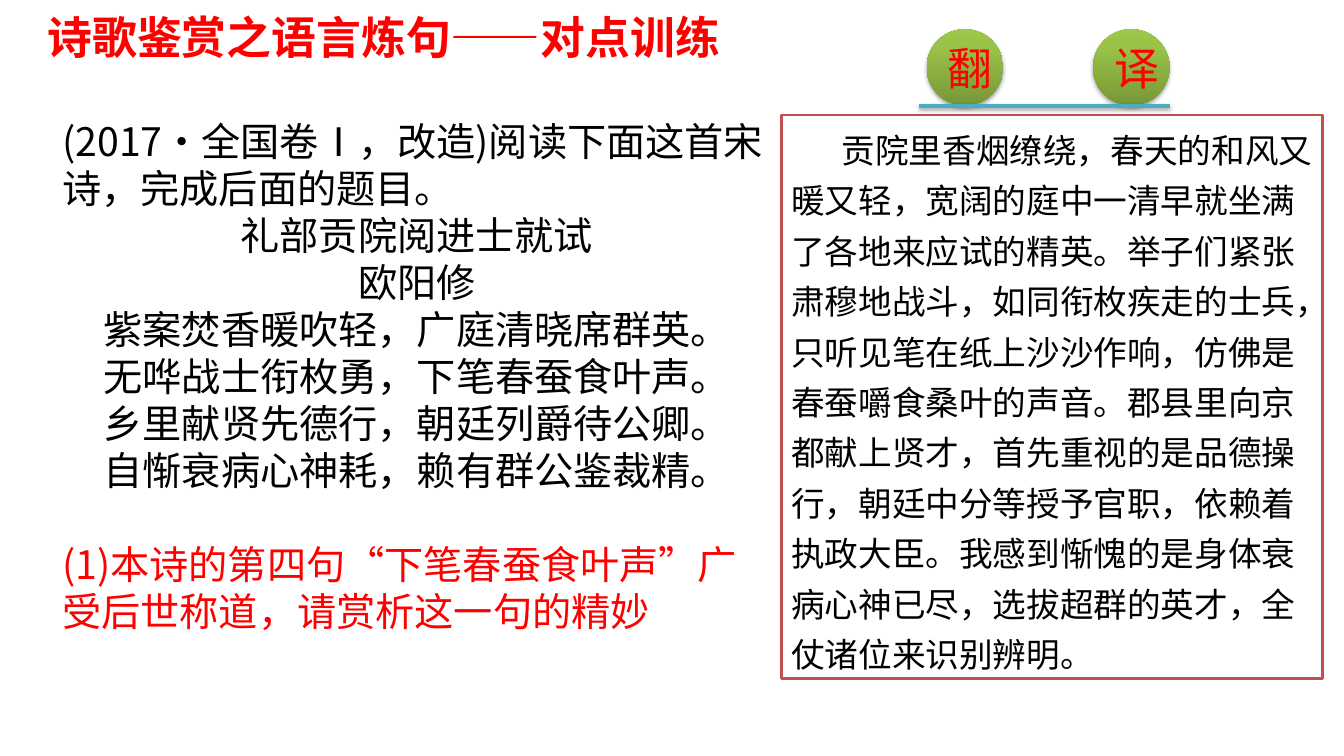
"""Builds a poetry appreciation slide with a poem, a question and its translation."""
from pptx import Presentation
from pptx import util as u
from pptx.dml.color import RGBColor
from pptx.enum import shapes, text
from pptx.oxml import parse_xml
from pptx.oxml.ns import nsdecls, qn

RED = RGBColor(0xFF, 0, 0)
BLACK = RGBColor(0, 0, 0)
WHITE = RGBColor(0xFF, 0xFF, 0xFF)
BRICK = RGBColor(0xC0, 0x50, 0x4D)
TEAL = RGBColor(0x4B, 0xAC, 0xC6)
GREENS = ((0, RGBColor(0x77, 0x97, 0x37)), (80, RGBColor(0x9B, 0xC3, 0x48)),
          (100, RGBColor(0x9D, 0xC7, 0x46)))
FONT = "Noto Sans CJK SC"

INTRO = "(2017·全国卷Ⅰ，改造)阅读下面这首宋诗，完成后面的题目。"
POEM = ("礼部贡院阅进士就试", "欧阳修",
        "紫案焚香暖吹轻，广庭清晓席群英。", "无哗战士衔枚勇，下笔春蚕食叶声。",
        "乡里献贤先德行，朝廷列爵待公卿。", "自惭衰病心神耗，赖有群公鉴裁精。")
QUESTION = "(1)本诗的第四句“下笔春蚕食叶声”广受后世称道，请赏析这一句的精妙"
TRANSLATION = (
    "贡院里香烟缭绕，春天的和风又暖又轻，宽阔的庭中一清早就坐满了各地来应试的精英。"
    "举子们紧张肃穆地战斗，如同衔枚疾走的士兵，只听见笔在纸上沙沙作响，仿佛是春蚕嚼食桑叶的声音。"
    "郡县里向京都献上贤才，首先重视的是品德操行，朝廷中分等授予官职，依赖着执政大臣。"
    "我感到惭愧的是身体衰病心神已尽，选拔超群的英才，全仗诸位来识别辨明。")


def write(paragraph, words, size=28, color=BLACK, bold=False, align=text.PP_ALIGN.LEFT,
          spacing=None, before=None, indent=None):
    paragraph.alignment = align
    paragraph.line_spacing = u.Pt(spacing or size * 1.2)
    if before:
        paragraph.space_before = u.Pt(before)
    if indent:
        properties = paragraph._p.get_or_add_pPr()
        properties.set("marL", "0")
        properties.set("indent", str(u.Inches(indent)))
    run = paragraph.add_run()
    run.text = words
    run.font.size, run.font.bold, run.font.name = u.Pt(size), bold, FONT
    run.font.color.rgb = color
    run.font._element.find(qn("a:latin")).addnext(
        parse_xml(f'<a:ea {nsdecls("a")} typeface="{FONT}"/>'))


def add_soft_shadow(shape):
    shape._element.spPr.append(parse_xml(
        f'<a:effectLst {nsdecls("a")}><a:outerShdw blurRad="{u.Pt(3.1)}" dist="{u.Pt(1.8)}" '
        'dir="5400000" rotWithShape="0"><a:srgbClr val="000000"><a:alpha val="35000"/>'
        '</a:srgbClr></a:outerShdw></a:effectLst>'))


class PoetrySlide:
    def __init__(self, deck):
        self.slide = deck.slides.add_slide(deck.slide_layouts[5])
        self.shapes = self.slide.shapes

    def prepare(self, frame, anchor=text.MSO_ANCHOR.TOP):
        frame.word_wrap = True
        frame.auto_size = text.MSO_AUTO_SIZE.NONE
        frame.vertical_anchor = anchor
        return frame

    def title(self, words, left, top, width, height):
        heading = self.shapes.title
        heading.left, heading.top = u.Inches(left), u.Inches(top)
        heading.width, heading.height = u.Inches(width), u.Inches(height)
        write(self.prepare(heading.text_frame).paragraphs[0], words,
              size=32, color=RED, bold=True)

    def passage(self, paragraphs, *box):
        frame = self.prepare(self.shapes.add_textbox(*map(u.Inches, box)).text_frame)
        for index, (words, style) in enumerate(paragraphs):
            write(frame.add_paragraph() if index else frame.paragraphs[0], words, **style)

    def framed_text(self, words, *box):
        panel = self.shapes.add_shape(shapes.MSO_SHAPE.RECTANGLE, *map(u.Inches, box))
        panel.shadow.inherit = False
        panel.fill.solid()
        panel.fill.fore_color.rgb = WHITE
        panel.line.color.rgb = BRICK
        panel.line.width = u.Pt(2)
        write(self.prepare(panel.text_frame).paragraphs[0], words,
              size=24, spacing=36, indent=0.5)

    def badge(self, character, left, top, size):
        ball = self.shapes.add_shape(shapes.MSO_SHAPE.OVAL, u.Inches(left), u.Inches(top),
                                     u.Inches(size), u.Inches(size))
        ball.line.fill.background()
        stops = "".join(f'<a:gs pos="{place * 1000}"><a:srgbClr val="{color}"/></a:gs>'
                        for place, color in GREENS)
        ball._element.spPr.find(qn("a:prstGeom")).addnext(parse_xml(
            f'<a:gradFill {nsdecls("a")} rotWithShape="1"><a:gsLst>{stops}</a:gsLst>'
            '<a:lin ang="16200000" scaled="0"/></a:gradFill>'))
        add_soft_shadow(ball)
        frame = self.prepare(ball.text_frame, text.MSO_ANCHOR.MIDDLE)
        write(frame.paragraphs[0], character, size=32, color=RED, align=text.PP_ALIGN.CENTER)

    def underline(self, left, right, y):
        rule = self.shapes.add_connector(shapes.MSO_CONNECTOR.STRAIGHT, u.Inches(left),
                                         u.Inches(y), u.Inches(right), u.Inches(y))
        rule.line.color.rgb = TEAL
        rule.line.width = u.Pt(3)
        add_soft_shadow(rule)


def main():
    deck = Presentation()
    deck.slide_width, deck.slide_height = u.Inches(13.33), u.Inches(7.5)
    page = PoetrySlide(deck)
    page.title("诗歌鉴赏之语言炼句——对点训练", 0.37, 0.05, 8.43, 0.64)
    verses = [(verse, {"align": text.PP_ALIGN.CENTER}) for verse in POEM]
    page.passage([(INTRO, {}), *verses, (QUESTION, {"color": RED, "before": 33.6})],
                 0.52, 1.11, 7.23, 5.28)
    page.framed_text(TRANSLATION, 7.75, 1.14, 5.37, 5.59)
    for index, character in enumerate("翻译"):
        page.badge(character, 9.19 + 1.65 * index, 0.29, 0.76)
    page.underline(9.11, 11.6, 1.05)
    deck.save("out.pptx")


if __name__ == "__main__":
    main()
